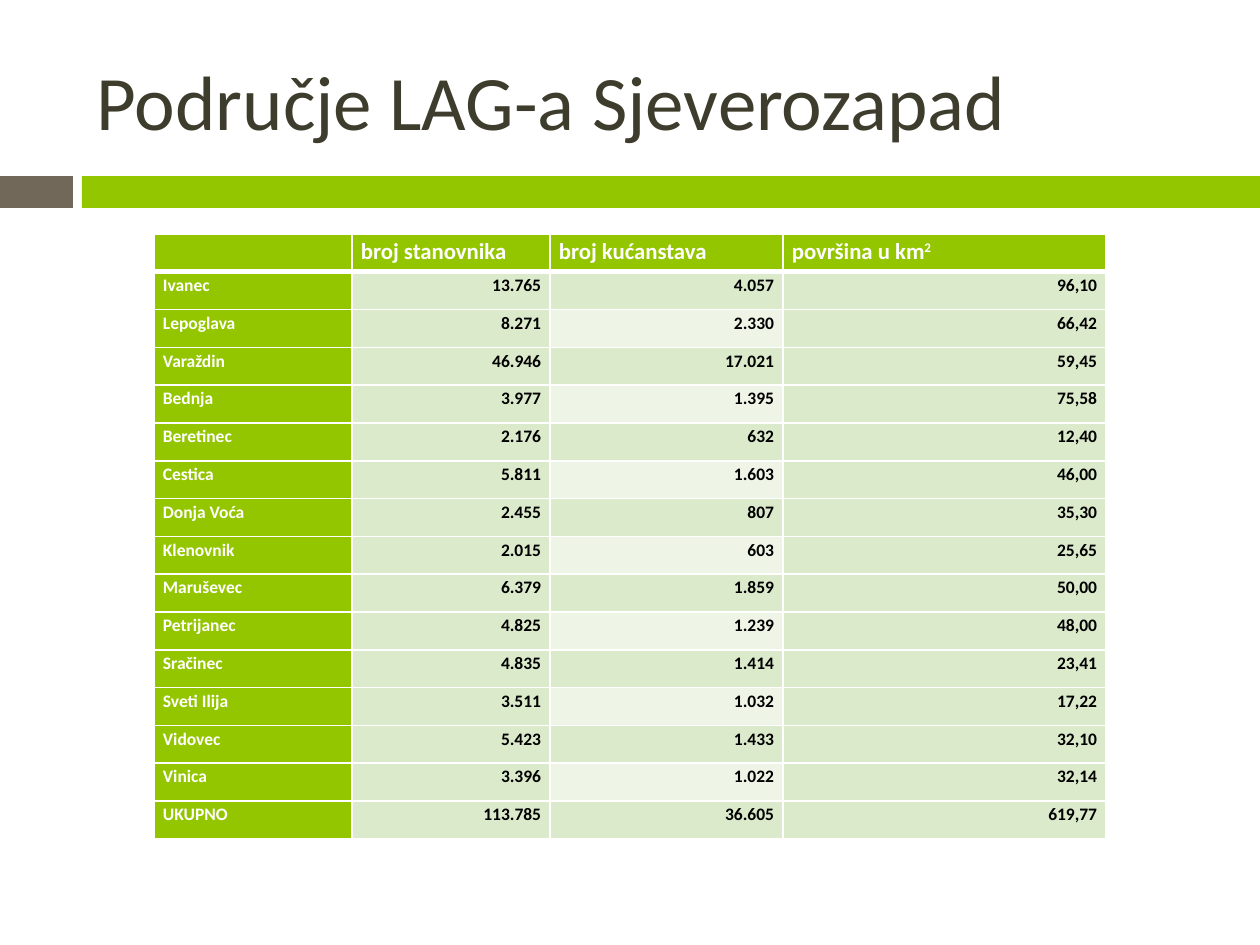
from lxml.etree import SubElement
from pptx import Presentation
from pptx.dml.color import RGBColor
from pptx.enum.shapes import MSO_SHAPE
from pptx.enum.text import MSO_ANCHOR, PP_ALIGN
from pptx.oxml.ns import qn
from pptx.util import Pt

TITLE = "Područje LAG-a Sjeverozapad"
HEADER = ["", "broj stanovnika", "broj kućanstava", "površina u km"]
HEADER_EXPONENT = "2"
ROWS = [
    ("Ivanec", "13.765", "4.057", "96,10"),
    ("Lepoglava", "8.271", "2.330", "66,42"),
    ("Varaždin", "46.946", "17.021", "59,45"),
    ("Bednja", "3.977", "1.395", "75,58"),
    ("Beretinec", "2.176", "632", "12,40"),
    ("Cestica", "5.811", "1.603", "46,00"),
    ("Donja Voća", "2.455", "807", "35,30"),
    ("Klenovnik", "2.015", "603", "25,65"),
    ("Maruševec", "6.379", "1.859", "50,00"),
    ("Petrijanec", "4.825", "1.239", "48,00"),
    ("Sračinec", "4.835", "1.414", "23,41"),
    ("Sveti Ilija", "3.511", "1.032", "17,22"),
    ("Vidovec", "5.423", "1.433", "32,10"),
    ("Vinica", "3.396", "1.022", "32,14"),
    ("UKUPNO", "113.785", "36.605", "619,77"),
]

COLORS = {
    "green": "94C600", "brown": "71685A", "title": "3E3D2D",
    "band": "DCEACC", "light": "EEF5E7", "white": "FFFFFF", "black": "000000",
}
FONT = "Calibri"
BANDS = [(0, 176, 73, 32, "brown"), (82, 176, 1178, 32, "green")]
TITLE_BOX = (84, 32, 1124, 136)
TABLE_LEFT, TABLE_TOP, TABLE_HEIGHT = 154, 234, 605
COLUMN_WIDTHS = [198, 198, 233, 323]
HEADER_SIZE, BODY_SIZE = 13, 10


def px(value):
    return round(value * 914400 / 126)


def color(name):
    return RGBColor.from_string(COLORS[name])


def set_values(target, values):
    for name, value in values.items():
        setattr(target, name, value)


def add_text(paragraph, text, size, color_name, bold=False):
    run = paragraph.add_run()
    run.text = text
    set_values(run.font, {"name": FONT, "size": Pt(size), "bold": bold})
    run.font.color.rgb = color(color_name)
    return run


def set_borders(cell, bottom_width):
    """Draw white lines around a cell; they must precede its fill in the XML."""
    properties = cell._tc.get_or_add_tcPr()
    for side, width in {"L": 1, "R": 1, "T": 1, "B": bottom_width}.items():
        line = SubElement(properties, qn(f"a:ln{side}"), w=str(Pt(width)))
        fill = SubElement(line, qn("a:solidFill"))
        SubElement(fill, qn("a:srgbClr"), val=COLORS["white"])


def cell_fill(row, column):
    if row == 0 or column == 0:
        return "green"
    return "light" if column == 2 and row % 2 == 0 else "band"


def fill_cell(cell, text, row, column):
    set_borders(cell, 3 if row == 0 else 1)
    cell.fill.solid()
    cell.fill.fore_color.rgb = color(cell_fill(row, column))
    set_values(cell, {"margin_left": px(9), "margin_right": px(9),
                      "margin_top": 0, "margin_bottom": 0,
                      "vertical_anchor": MSO_ANCHOR.TOP})
    paragraph = cell.text_frame.paragraphs[0]
    paragraph.line_spacing = 1.15
    is_value = row > 0 and column > 0
    if is_value:
        paragraph.alignment = PP_ALIGN.RIGHT
    size = HEADER_SIZE if row == 0 else BODY_SIZE
    if not text:
        SubElement(paragraph._p, qn("a:endParaRPr"), sz=str(size * 100))
        return
    text_color = "black" if is_value else "white"
    add_text(paragraph, text, size, text_color, bold=True)
    if row == 0 and column == len(HEADER) - 1:
        exponent = add_text(paragraph, HEADER_EXPONENT, size, text_color, bold=True)
        exponent.font._element.set("baseline", "30000")


def add_bands(slide):
    for *box, fill in BANDS:
        band = slide.shapes.add_shape(MSO_SHAPE.RECTANGLE, *map(px, box))
        band.shadow.inherit = False
        band.fill.solid()
        band.fill.fore_color.rgb = color(fill)
        band.line.fill.background()


def add_title(slide):
    title = slide.shapes.title
    set_values(title, dict(zip(("left", "top", "width", "height"), map(px, TITLE_BOX))))
    title.text_frame.vertical_anchor = MSO_ANCHOR.MIDDLE
    paragraph = title.text_frame.paragraphs[0]
    paragraph.alignment = PP_ALIGN.LEFT
    add_text(paragraph, TITLE, 44, "title")


def add_data_table(slide):
    content = [HEADER, *ROWS]
    table = slide.shapes.add_table(
        len(content), len(HEADER), px(TABLE_LEFT), px(TABLE_TOP),
        px(sum(COLUMN_WIDTHS)), px(TABLE_HEIGHT)).table
    table.first_col = True
    for column, width in zip(table.columns, COLUMN_WIDTHS):
        column.width = px(width)
    for row, texts in enumerate(content):
        table.rows[row].height = px(TABLE_HEIGHT / len(content))
        for column, text in enumerate(texts):
            fill_cell(table.cell(row, column), text, row, column)


def main():
    presentation = Presentation()
    presentation.slide_width, presentation.slide_height = px(1260), px(945)
    slide = presentation.slides.add_slide(presentation.slide_layouts[5])
    add_bands(slide)
    add_title(slide)
    add_data_table(slide)
    presentation.save("out.pptx")


if __name__ == "__main__":
    main()
